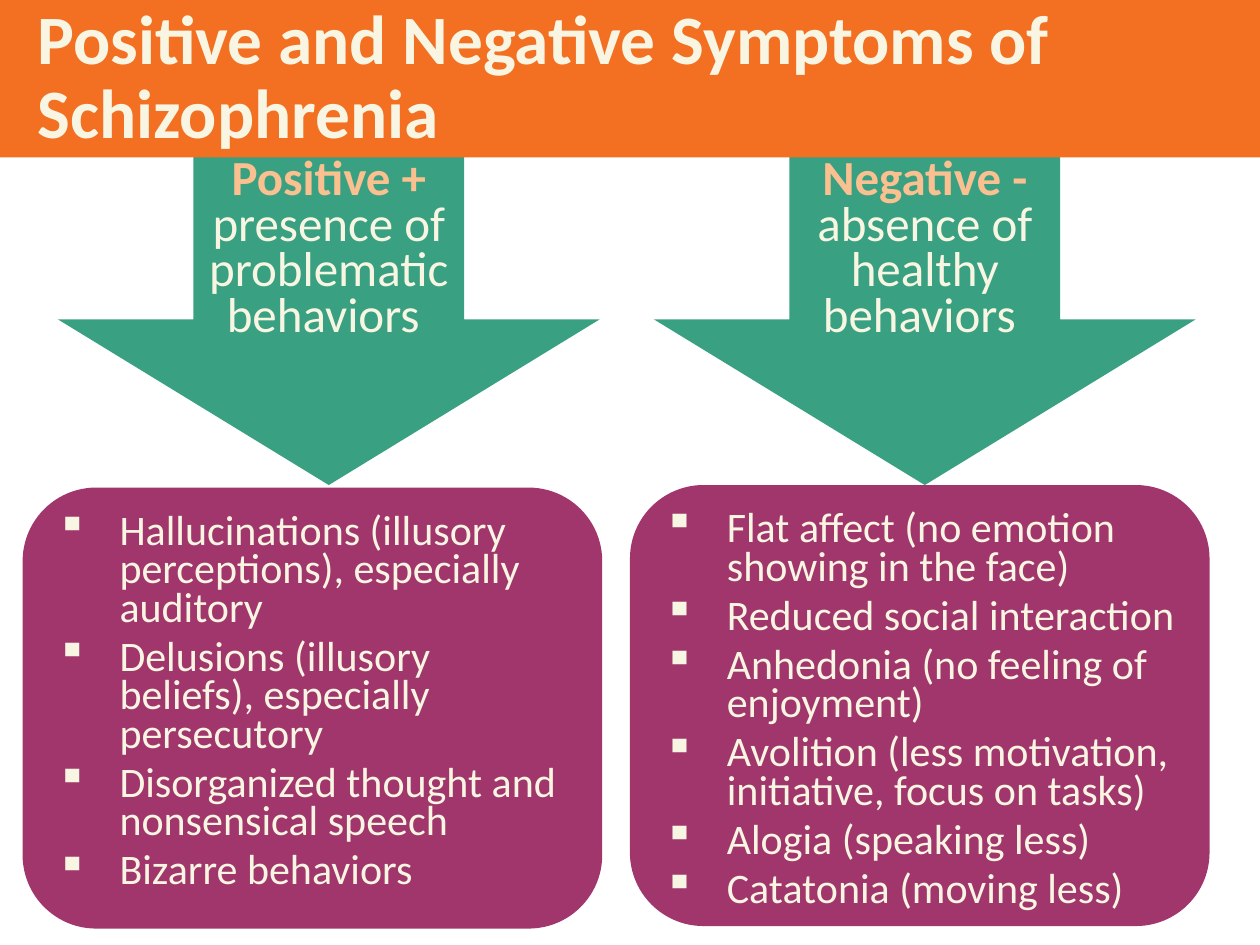
from dataclasses import dataclass

from lxml import etree
from pptx import Presentation
from pptx.dml.color import RGBColor
from pptx.enum.shapes import MSO_SHAPE
from pptx.enum.text import MSO_ANCHOR, PP_ALIGN
from pptx.oxml.ns import qn
from pptx.util import Inches, Pt

ARROW = MSO_SHAPE.DOWN_ARROW
ROUND = MSO_SHAPE.ROUNDED_RECTANGLE
RECT = MSO_SHAPE.RECTANGLE
LEFT, CENTER = PP_ALIGN.LEFT, PP_ALIGN.CENTER
TOP, MIDDLE = MSO_ANCHOR.TOP, MSO_ANCHOR.MIDDLE

FONT = "Calibri"
COLORS = {
    "orange": "F36F21",
    "green": "3AA082",
    "plum": "A0366C",
    "cream": "F8F6E3",
    "peach": "FAC090",
}


@dataclass
class Group:
    """One kind of symptom: an arrow above a box of examples."""
    name: str
    sense: str
    items: list[str]
    arrow_x: float
    box_x: float
    box_y: float


GROUPS = [
    Group("Positive + ", "presence of problematic behaviors ", [
        "Hallucinations (illusory perceptions), especially auditory",
        "Delusions (illusory beliefs), especially persecutory",
        "Disorganized thought and nonsensical speech",
        "Bizarre behaviors",
    ], 0.46, 0.18, 3.87),
    Group("Negative - ", "absence of healthy behaviors ", [
        "Flat affect (no emotion showing in the face)",
        "Reduced social interaction",
        "Anhedonia (no feeling of enjoyment)",
        "Avolition (less motivation, initiative, focus on tasks)",
        "Alogia (speaking less)",
        "Catatonia (moving less)",
    ], 5.19, 5, 3.85),
]


def add_block(slide, kind, x: float, y: float, w: float, h: float,
              fill: str, anchor=TOP):
    shape = slide.shapes.add_shape(
        kind, Inches(x), Inches(y), Inches(w), Inches(h))
    shape.shadow.inherit = False
    shape.fill.solid()
    shape.fill.fore_color.rgb = RGBColor.from_string(COLORS[fill])
    shape.line.fill.background()
    shape.text_frame.word_wrap = True
    shape.text_frame.vertical_anchor = anchor
    return shape


def add_text(para, text: str, *, size: float, lead: float,
             color: str = "cream", bold: bool = False, align=LEFT) -> None:
    para.alignment = align
    para.line_spacing = Pt(lead)
    run = para.add_run()
    run.text = text
    run.font.name = FONT
    run.font.size = Pt(size)
    run.font.bold = bold
    run.font.color.rgb = RGBColor.from_string(COLORS[color])


def add_bullet(para) -> None:
    props = para._p.get_or_add_pPr()
    props.set("marL", str(Inches(0.5)))
    props.set("indent", str(Inches(-0.5)))
    etree.SubElement(props, qn("a:buChar")).set("char", "▪")


def add_arrow(slide, group: Group) -> None:
    arrow = add_block(slide, ARROW, group.arrow_x, 1.22, 4.3, 2.63, "green")
    para = arrow.text_frame.paragraphs[0]
    look = {"size": 28, "lead": 26, "align": CENTER}
    add_text(para, group.name, color="peach", bold=True, **look)
    add_text(para, group.sense, **look)


def add_box(slide, group: Group) -> None:
    box = add_block(slide, ROUND, group.box_x, group.box_y, 4.6, 3.5, "plum")
    frame = box.text_frame
    for i, item in enumerate(group.items):
        para = frame.add_paragraph() if i else frame.paragraphs[0]
        add_text(para, item, size=24, lead=22)
        para.space_after = Pt(6)
        add_bullet(para)


def add_title(slide, text: str) -> None:
    bar = add_block(slide, RECT, 0, 0, 10, 1.25, "orange", MIDDLE)
    bar.text_frame.margin_left = Inches(0.3)
    add_text(bar.text_frame.paragraphs[0], text, size=39.6, lead=42, bold=True)


def main() -> None:
    deck = Presentation()
    deck.slide_width, deck.slide_height = Inches(10), Inches(7.5)
    slide = deck.slides.add_slide(deck.slide_layouts[6])

    # Arrows and boxes, one pair per group
    for group in GROUPS:
        add_arrow(slide, group)
        add_box(slide, group)

    # Title bar lies over the arrow tops
    add_title(slide, "Positive and Negative Symptoms of Schizophrenia")
    deck.save("out.pptx")


if __name__ == "__main__":
    main()
